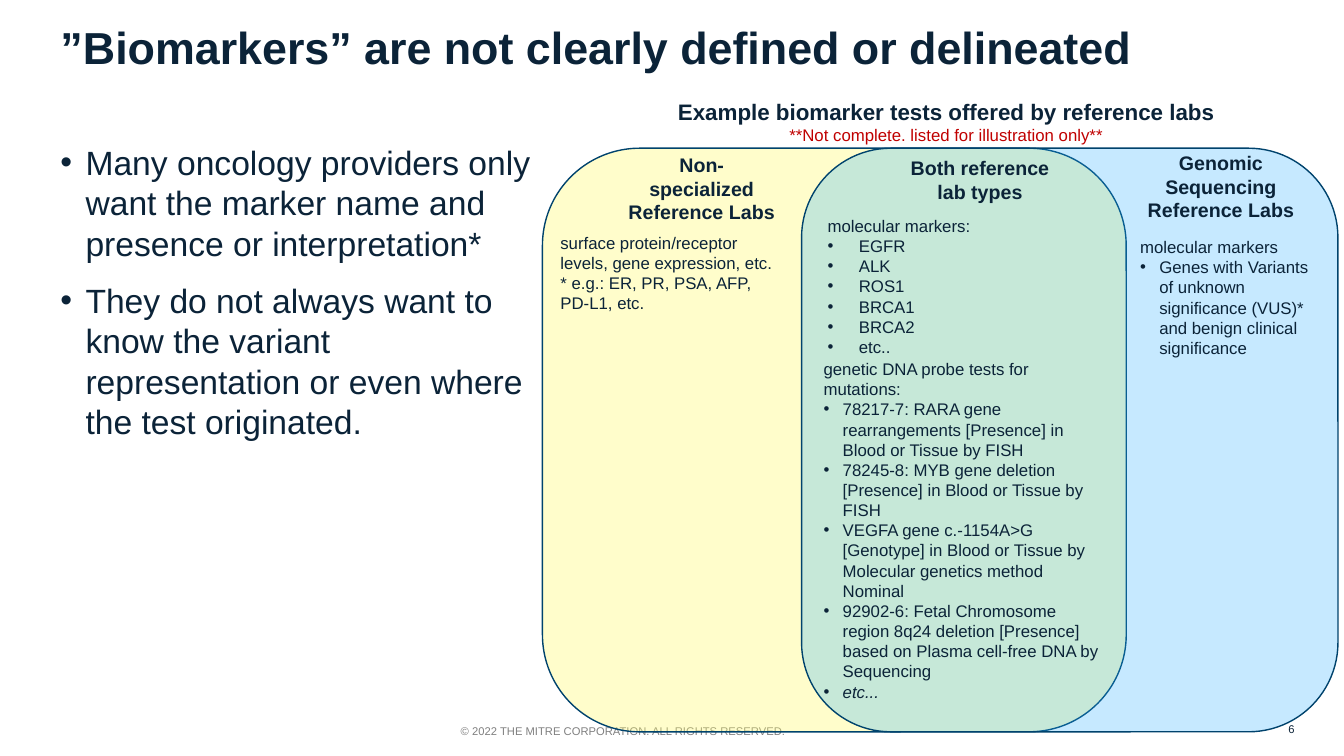
from dataclasses import dataclass

import pptx
import pptx.dml.color
import pptx.enum.shapes
import pptx.enum.text
import pptx.oxml.ns
import pptx.util
from lxml import etree
from pptx.util import Inches

NAVY = "0B2338"
LEFT = pptx.enum.text.PP_ALIGN.LEFT
CENTER = pptx.enum.text.PP_ALIGN.CENTER
RIGHT = pptx.enum.text.PP_ALIGN.RIGHT
TOP = pptx.enum.text.MSO_ANCHOR.TOP
MIDDLE = pptx.enum.text.MSO_ANCHOR.MIDDLE


@dataclass
class Line:
    text: str
    size: float = 12
    color: str = NAVY
    bold: bool = False
    italic: bool = False
    align: int = LEFT
    indent: float = 0  # hanging indent in inches; above zero adds a bullet
    before: float = 0
    after: float = 0


@dataclass
class TextBlock:
    box: tuple[float, float, float, float]
    lines: list[Line]
    anchor: int = TOP
    side_inset: float = 0.1
    wrap: bool = True


@dataclass
class LabRegion:
    box: tuple[float, float, float, float]
    color: str
    opacity: int


def rgb(color: str) -> pptx.dml.color.RGBColor:
    return pptx.dml.color.RGBColor.from_string(color)


def write_lines(frame, lines: list[Line]) -> None:
    for index, line in enumerate(lines):
        paragraph = frame.paragraphs[0] if index == 0 else frame.add_paragraph()
        paragraph.text = line.text
        paragraph.alignment = line.align
        paragraph.space_before = pptx.util.Pt(line.before if index else 0)
        paragraph.space_after = pptx.util.Pt(line.after)
        if line.indent:
            properties = paragraph._p.get_or_add_pPr()
            properties.set("marL", str(Inches(line.indent)))
            properties.set("indent", str(-Inches(line.indent)))
            for tag, key, value in (("a:buFont", "typeface", "Arial"),
                                    ("a:buChar", "char", "•")):
                etree.SubElement(properties, pptx.oxml.ns.qn(tag)).set(key, value)
        font = paragraph.font
        font.name = "Arial"
        font.size = pptx.util.Pt(line.size)
        font.bold = line.bold
        font.italic = line.italic
        font.color.rgb = rgb(line.color)


def add_text(slide, block: TextBlock) -> None:
    frame = slide.shapes.add_textbox(*map(Inches, block.box)).text_frame
    frame.word_wrap = block.wrap
    frame.vertical_anchor = block.anchor
    frame.margin_left = frame.margin_right = Inches(block.side_inset)
    write_lines(frame, block.lines)


def add_region(slide, region: LabRegion) -> None:
    shape = slide.shapes.add_shape(
        pptx.enum.shapes.MSO_SHAPE.ROUNDED_RECTANGLE, *map(Inches, region.box))
    shape.shadow.inherit = False
    shape.fill.solid()
    shape.fill.fore_color.rgb = rgb(region.color)
    color = shape.fill._xPr.find(".//" + pptx.oxml.ns.qn("a:srgbClr"))
    etree.SubElement(color, pptx.oxml.ns.qn("a:alpha")).set("val", str(region.opacity * 1000))
    shape.line.color.rgb = rgb("00436D")
    shape.line.width = pptx.util.Pt(1)


def bullets(texts: list[str], indent: float) -> list[Line]:
    return [Line(text, indent=indent) for text in texts]


def heading(text: str, left: float, top: float, height: float) -> TextBlock:
    return TextBlock((left, top, 1.66, height), [Line(text, 14, bold=True, align=CENTER)])


FOOTERS = [
    TextBlock((4.57, 7.13, 4.76, 0.24),
              [Line("© 2022 THE MITRE CORPORATION. ALL RIGHTS RESERVED.", 8, "808080")],
              MIDDLE, 0),
    TextBlock((11.96, 7.09, 0.88, 0.28), [Line("6", 8, align=RIGHT)], MIDDLE, 0),
]

PROVIDER_NEEDS = TextBlock((0.5, 1.36, 4.91, 5.47), [
    Line(text, 24, indent=0.25, before=6, after=6) for text in (
        "Many oncology providers only want the marker name and presence or interpretation*",
        "They do not always want to know the variant representation or even where "
        "the test originated.",
    )])

LAB_REGIONS = [
    LabRegion((5.38, 1.47, 5.79, 5.79), "FFFA67", 34),
    LabRegion((7.95, 1.47, 5.32, 5.79), "25ACFF", 26),
]

LAB_TEXTS = [
    heading("Both reference lab types", 8.89, 1.5, 0.49),
    heading("Genomic Sequencing Reference Labs", 11.28, 1.45, 0.81),
    heading("Non-specialized Reference Labs", 6.13, 1.47, 0.49),
    TextBlock((5.46, 2.26, 2.4, 1.06), [
        Line("surface protein/receptor levels, gene expression, etc."),
        Line("* e.g.: ER, PR, PSA, AFP, PD-L1, etc."),
    ]),
    TextBlock((8.07, 3.51, 3, 3.59), [
        Line("genetic DNA probe tests for mutations:"),
        *bullets([
            "78217-7: RARA gene rearrangements [Presence] in Blood or Tissue by FISH",
            "78245-8: MYB gene deletion [Presence] in Blood or Tissue by FISH",
            "VEGFA gene c.-1154A>G [Genotype] in Blood or Tissue by Molecular "
            "genetics method Nominal",
            "92902-6: Fetal Chromosome region 8q24 deletion [Presence] based on "
            "Plasma cell-free DNA by Sequencing",
        ], 0.19),
        Line("etc...", italic=True, indent=0.19),
    ]),
    TextBlock((11.21, 2.3, 1.94, 1.45), [
        Line("molecular markers"),
        *bullets(["Genes with Variants of unknown significance (VUS)* and benign "
                  "clinical significance"], 0.19),
    ]),
    TextBlock((8.11, 2.09, 1.92, 1.33), [
        Line("molecular markers:"),
        *bullets(["EGFR", "ALK", "ROS1", "BRCA1", "BRCA2", "etc.."], 0.31),
    ]),
    TextBlock((6.48, 0.92, 5.81, 0.52), [
        Line("Example biomarker tests offered by reference labs", 16, bold=True, align=CENTER),
        Line("**Not complete. listed for illustration only**", color="C00000", align=CENTER),
    ], wrap=False),
]


def main() -> None:
    deck = pptx.Presentation()
    deck.slide_width, deck.slide_height = Inches(13.33), Inches(7.5)
    slide = deck.slides.add_slide(deck.slide_layouts.get_by_name("Title Only"))

    # Title
    title = slide.shapes.title
    title.left, title.top, title.width, title.height = map(Inches, (0.5, 0.08, 12.33, 0.76))
    title.text_frame.vertical_anchor = MIDDLE
    write_lines(title.text_frame,
                [Line("”Biomarkers” are not clearly defined or delineated", 32, bold=True)])

    # Footer and provider needs, behind the lab regions
    for block in (*FOOTERS, PROVIDER_NEEDS):
        add_text(slide, block)

    # Overlapping lab types and their tests
    for region in LAB_REGIONS:
        add_region(slide, region)
    for block in LAB_TEXTS:
        add_text(slide, block)

    deck.save("out.pptx")


if __name__ == "__main__":
    main()
